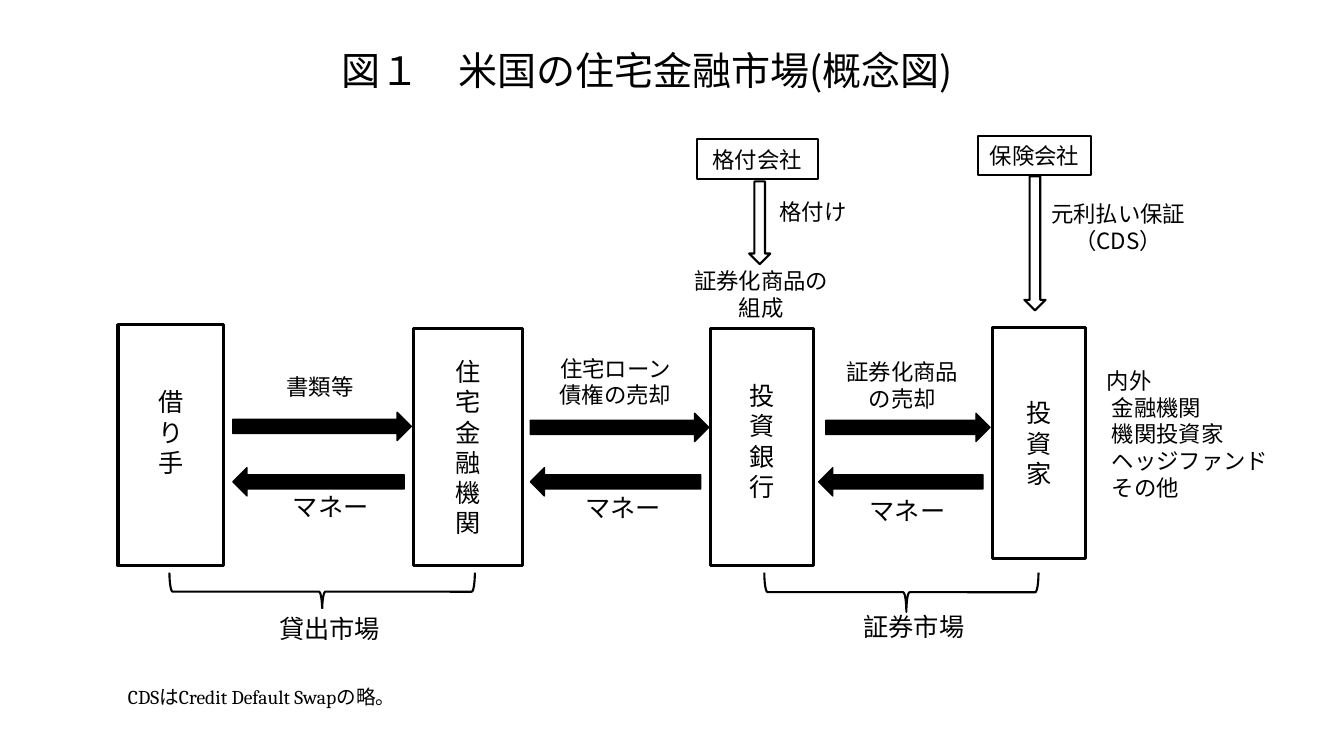
from dataclasses import dataclass

import pptx
import pptx.dml.color
import pptx.enum.shapes
import pptx.enum.text
import pptx.oxml.ns
import pptx.util
from pptx.util import Inches

MSO = pptx.enum.shapes.MSO_SHAPE
ALIGN = pptx.enum.text.PP_ALIGN
ANCHOR = pptx.enum.text.MSO_ANCHOR


@dataclass(frozen=True)
class Theme:
    ink: str = "000000"
    paper: str = "FFFFFF"
    font: str = "Noto Sans CJK JP"
    note_font: str = "Cambria"
    title: float = 27.9
    large: float = 18
    medium: float = 16
    note: float = 14
    thick: float = 2.25
    normal: float = 1.5
    thin: float = 1


T = Theme()


def rgb(color):
    return pptx.dml.color.RGBColor.from_string(color)


def write(sp, *lines, size=T.medium, font=T.font, align=ALIGN.CENTER,
          anchor=ANCHOR.MIDDLE, lift=0, indent=0, spacing=None):
    """Write one paragraph per line; lift raises the text, indent spares the first line."""
    tf = sp.text_frame
    tf.word_wrap = True
    tf.vertical_anchor = anchor
    tf.margin_bottom = Inches(0.05 + 2 * lift)
    for i, line in enumerate(lines):
        p = tf.paragraphs[0] if i == 0 else tf.add_paragraph()
        p.alignment = align
        if spacing:
            p.line_spacing = spacing
        if indent and i:
            p._p.get_or_add_pPr().set("marL", str(Inches(indent)))
        r = p.add_run()
        r.text = line
        r.font.size = pptx.util.Pt(size)
        r.font.name = font
        r.font.color.rgb = rgb(T.ink)
        ea = r._r.get_or_add_rPr().makeelement(pptx.oxml.ns.qn("a:ea"), {"typeface": T.font})
        r.font._element.find(pptx.oxml.ns.qn("a:latin")).addnext(ea)


def add_shape(s, kind, at, fill=None, line=T.normal):
    sp = s.shapes.add_shape(kind, *map(Inches, at))
    sp.shadow.inherit = False
    if fill:
        sp.fill.solid()
        sp.fill.fore_color.rgb = rgb(fill)
    else:
        sp.fill.background()
    sp.line.color.rgb = rgb(T.ink)
    sp.line.width = pptx.util.Pt(line)
    return sp


def add_box(s, at, *lines, line=T.normal, **fmt):
    write(add_shape(s, MSO.RECTANGLE, at, T.paper, line), *lines, **fmt)


def add_player(s, at, name, **fmt):
    """Market participant: a tall box with its name set one character per line."""
    add_box(s, at, *name, line=T.thick, size=T.large, **fmt)


def add_label(s, at, *lines, fill=T.paper, **fmt):
    sp = s.shapes.add_textbox(*map(Inches, at))
    if fill:
        sp.fill.solid()
        sp.fill.fore_color.rgb = rgb(fill)
    write(sp, *lines, **fmt)
    return sp


def add_flow(s, kind, left, top, width):
    add_shape(s, kind, (left, top, width, 0.28), T.ink, T.thin)


def add_brace(s, left, top, width, height, tip):
    """Brace below a group, opening upward; tip is its place from the right end."""
    at = (left + (width - height) / 2, top + (height - width) / 2, height, width)
    sp = add_shape(s, MSO.RIGHT_BRACE, at)
    sp.rotation = 90
    sp.adjustments[0] = 0.083
    sp.adjustments[1] = tip


def main():
    prs = pptx.Presentation()
    prs.slide_width, prs.slide_height = Inches(13.33), Inches(7.5)
    s = prs.slides.add_slide(prs.slide_layouts[6])

    add_label(s, (3.29, 0.44, 6.83, 0.56), "図１　米国の住宅金融市場(概念図)",
              fill=None, size=T.title, align=ALIGN.LEFT, spacing=0.9)

    add_player(s, (1.17, 3.22, 1.05, 2.39), "借り手", lift=0.13)
    add_player(s, (4.1, 3.26, 1.08, 2.35), "住宅金融機関")
    add_player(s, (7.05, 3.26, 1.02, 2.35), "投資銀行", lift=0.06)
    add_player(s, (9.84, 3.25, 0.93, 2.29), "投資家")

    for at, text in (((2.41, 3.64, 1.53, 0.38), "書類等"),
                     ((5.43, 3.55, 1.35, 0.47), "住宅ローン債権の売却"),
                     ((8.25, 3.57, 1.4, 0.5), "証券化商品の売却"),
                     ((6.76, 2.62, 1.58, 0.6), "証券化商品の組成")):
        add_label(s, at, text)
    for left, top, width in ((2.79, 4.81, 0.98), (5.64, 4.82, 1.08), (8.5, 4.85, 1)):
        add_label(s, (left, top, width, 0.43), "マネー", size=T.large)
    add_label(s, (10.88, 3.69, 1.98, 1.23), "内外", "金融機関", "機関投資家",
              "ヘッジファンド", "その他", align=ALIGN.LEFT, indent=0.05)

    for left, top, width in ((2.31, 4.09, 1.77), (5.26, 4.1, 1.77), (8.19, 4.1, 1.63)):
        add_flow(s, MSO.RIGHT_ARROW, left, top, width)
    for left, width in ((2.31, 1.7), (5.26, 1.69), (8.12, 1.63)):
        add_flow(s, MSO.LEFT_ARROW, left, 4.64, width)

    add_brace(s, 1.68, 5.68, 3.03, 0.38, tip=0.5)
    add_brace(s, 7.58, 5.68, 2.72, 0.39, tip=0.482)
    add_label(s, (2.17, 6.04, 2.2, 0.38), "貸出市場", size=T.large)
    add_label(s, (8.05, 5.99, 2.03, 0.44), "証券市場", fill=None, size=T.large)

    add_box(s, (6.91, 1.38, 1.2, 0.4), "格付会社")
    add_box(s, (9.7, 1.35, 1.12, 0.39), "保険会社")
    add_shape(s, MSO.DOWN_ARROW, (7.43, 1.8, 0.21, 0.82))
    add_shape(s, MSO.DOWN_ARROW, (10.16, 1.75, 0.21, 1.33))
    add_label(s, (7.57, 1.91, 0.99, 0.38), "格付け", fill=None)
    add_label(s, (10.31, 1.93, 1.56, 0.65), "元利払い保証", "（CDS）", fill=None)

    note = add_label(s, (1.17, 6.75, 6.67, 0.34), "CDSはCredit Default Swapの略。", fill=None,
                     size=T.note, font=T.note_font, align=ALIGN.LEFT, anchor=ANCHOR.TOP)
    note.text_frame.auto_size = pptx.enum.text.MSO_AUTO_SIZE.SHAPE_TO_FIT_TEXT

    prs.save("out.pptx")


if __name__ == "__main__":
    main()
